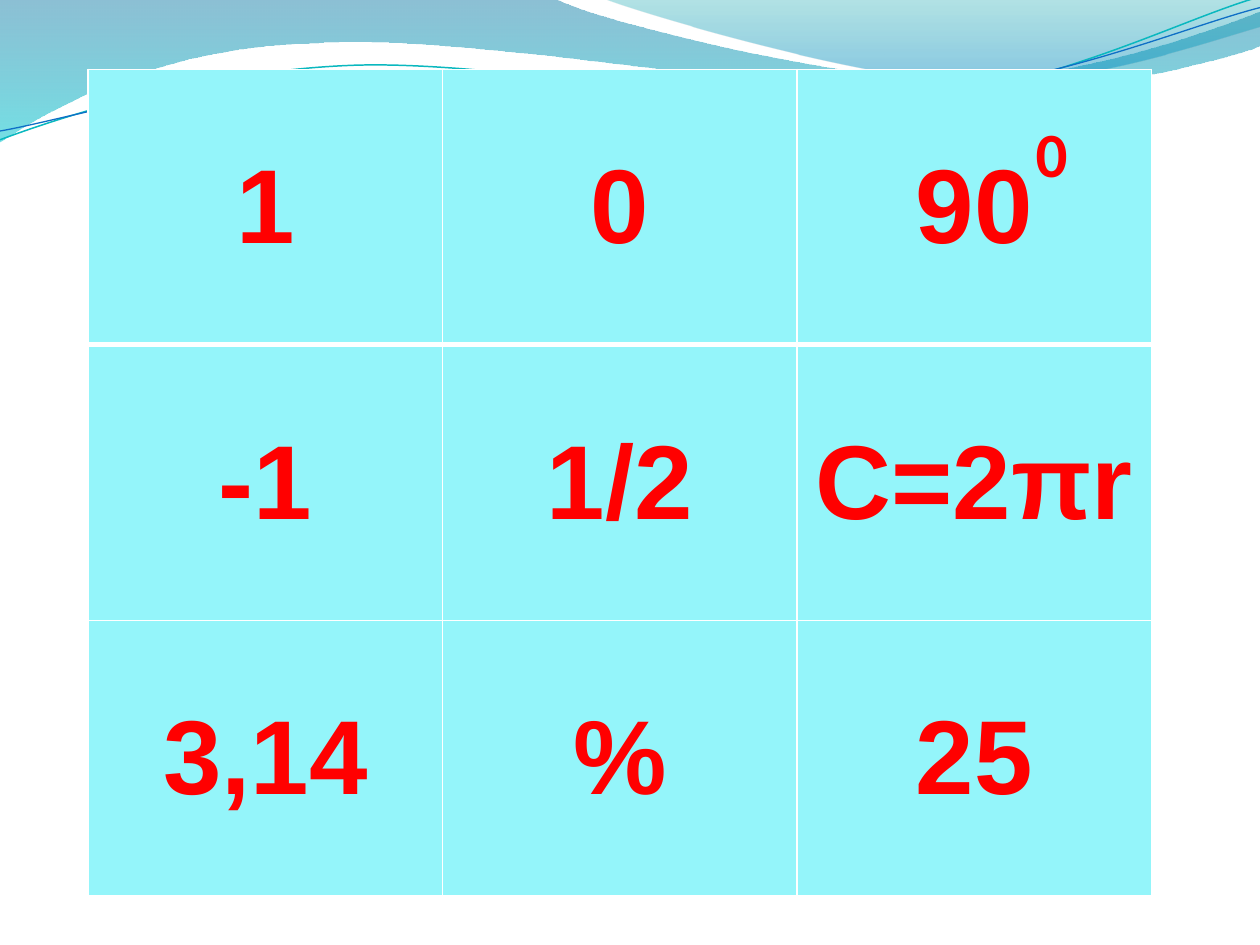
from math import cos, radians, sin

from lxml.etree import SubElement
from pptx import Presentation
from pptx.dml.color import RGBColor
from pptx.enum.text import MSO_ANCHOR, MSO_AUTO_SIZE, PP_ALIGN
from pptx.oxml.ns import qn
from pptx.util import Inches, Pt

COLORS = {
    "cell": "94F5FA", "text": "FF0000", "border": "FFFFFF",
    "wave_blue": "0074A1", "wave_cyan": "00C6CF",
    "crest_teal": "00A1A9", "crest_blue": "008BBF",
    "line_teal": "0AB8BF", "line_blue": "0F6FC6",
}
ANSWERS = [["1", "0", "90"], ["-1", "1/2", "C=2πr"], ["3,14", "%", "25"]]
LINE_ROTATION = 357.3

# Outlines in slide inches: one point is a straight step, three are a Bézier curve
LEFT_WAVE = [
    [(0, 0)], [(4.4, -0.01)],
    [(4.76, 0.17), (6.64, 0.63), (7.58, 0.63)],
    [(8.53, 0.63), (9.58, 0.26), (10, 0.09)],
    [(10.01, 0.36)],
    [(9.83, 0.44), (8.7, 0.76), (7.46, 0.75)],
    [(6.22, 0.75), (3.82, 0.28), (2.57, 0.34)],
    [(1.29, 0.36), (0.46, 0.83), (-0.01, 1.13)],
    [(0, 0)],
]
RIGHT_WAVE = [
    [(4.79, -0.01)],
    [(5.09, 0.11), (6.82, 0.62), (7.69, 0.65)],
    [(8.56, 0.69), (9.61, 0.32), (10, 0.21)],
    [(10, 0)], [(4.79, -0.01)],
]
TEAL_LINE = [
    [(0, 1.11)],
    [(0.48, 0.93), (1.58, 0.57), (2.77, 0.52)],
    [(3.95, 0.47), (5.93, 0.89), (7.13, 0.8)],
    [(8.33, 0.71), (9.38, 0.15), (9.98, -0.02)],
]
BLUE_LINE = [
    [(0, 1.04)],
    [(0.47, 0.96), (1.64, 0.61), (2.83, 0.56)],
    [(4.03, 0.51), (5.97, 0.84), (7.17, 0.75)],
    [(8.36, 0.67), (9.41, 0.21), (10, 0.06)],
]


def color(name):
    return RGBColor.from_string(COLORS[name])


def to_local(point, box, rotation):
    """Undo the shape's rotation about its centre and measure from its corner."""
    left, top, width, height = box
    angle = radians(-rotation)
    x, y = point[0] - left - width / 2, point[1] - top - height / 2
    return (x * cos(angle) - y * sin(angle) + width / 2,
            x * sin(angle) + y * cos(angle) + height / 2)


def add_outline(slide, outline, box, rotation=0, close=False):
    ends = [tuple(Inches(value) for value in step[-1]) for step in outline]
    builder = slide.shapes.build_freeform(*ends[0])
    builder.add_line_segments(ends[1:], close=close)
    shape = builder.convert_to_shape()
    shape.left, shape.top, shape.width, shape.height = map(Inches, box)
    shape.rotation = rotation
    shape.shadow.inherit = False

    # Turn the straight segments into true curves
    geometry = next(shape._element.spPr.iter(qn("a:path")))
    geometry.clear()
    geometry.set("w", str(shape.width))
    geometry.set("h", str(shape.height))
    for index, step in enumerate(outline):
        tag = "moveTo" if index == 0 else "lnTo" if len(step) == 1 else "cubicBezTo"
        segment = SubElement(geometry, qn(f"a:{tag}"))
        for point in step:
            x, y = to_local(point, box, rotation)
            SubElement(segment, qn("a:pt"), x=str(Inches(x)), y=str(Inches(y)))
    if close:
        SubElement(geometry, qn("a:close"))
    return shape


def add_wave(slide, outline, box, stops):
    shape = add_outline(slide, outline, box, close=True)
    shape.line.fill.background()
    shape.fill.gradient()
    shape.fill.gradient_angle = 270
    for stop, (position, name, _) in zip(shape.fill.gradient_stops, stops):
        stop.position = position
        stop.color.rgb = color(name)
    gradient_colors = shape._element.spPr.iter(qn("a:srgbClr"))
    for element, (_, _, opacity) in zip(gradient_colors, stops):
        SubElement(element, qn("a:alpha"), val=str(opacity * 1000))


def add_curve(slide, outline, box, name, width):
    shape = add_outline(slide, outline, box, LINE_ROTATION)
    shape.fill.background()
    shape.line.color.rgb = color(name)
    shape.line.width = Pt(width)


def add_header(slide):
    add_wave(slide, LEFT_WAVE, (-0.01, -0.01, 10.02, 1.14),
             [(0, "wave_blue", 45), (1, "wave_cyan", 55)])
    add_wave(slide, RIGHT_WAVE, (4.79, -0.01, 5.21, 0.7),
             [(0, "crest_teal", 30), (0.8, "crest_blue", 45)])
    add_curve(slide, TEAL_LINE, (-0.02, 0.22, 10.02, 0.71), "line_teal", 0.85)
    add_curve(slide, BLUE_LINE, (-0.02, 0.3, 10.03, 0.58), "line_blue", 0.75)


def format_font(paragraph, typeface, size):
    font = paragraph.runs[0].font
    font.name, font.size, font.bold = typeface, Pt(size), True
    font.color.rgb = color("text")


def set_borders(cell, widths):
    properties = cell._tc.get_or_add_tcPr()
    for side, width in widths.items():
        line = SubElement(properties, qn(f"a:ln{side}"), w=str(Pt(width)))
        fill = SubElement(line, qn("a:solidFill"))
        SubElement(fill, qn("a:srgbClr"), val=COLORS["border"])


def add_answer_table(slide, left, top, width, height):
    frame = slide.shapes.add_table(len(ANSWERS), len(ANSWERS[0]), left, top, width, height)
    for row, answers in enumerate(ANSWERS):
        for column, answer in enumerate(answers):
            cell = frame.table.cell(row, column)
            # A thick rule parts the first row from the rest
            set_borders(cell, {"L": 1, "R": 1, "T": 3 if row == 1 else 1,
                               "B": 3 if row == 0 else 1})
            cell.fill.solid()
            cell.fill.fore_color.rgb = color("cell")
            cell.vertical_anchor = MSO_ANCHOR.MIDDLE
            paragraph = cell.text_frame.paragraphs[0]
            paragraph.text = answer
            paragraph.alignment = PP_ALIGN.CENTER
            format_font(paragraph, "Arial", 60)


def add_degree_sign(slide, left, top, width, height):
    text_frame = slide.shapes.add_textbox(left, top, width, height).text_frame
    text_frame.text = "0"
    text_frame.word_wrap = True
    text_frame.auto_size = MSO_AUTO_SIZE.SHAPE_TO_FIT_TEXT
    format_font(text_frame.paragraphs[0], "Calibri", 36)


def main():
    presentation = Presentation()
    presentation.slide_width, presentation.slide_height = Inches(10), Inches(7.5)
    slide = presentation.slides.add_slide(presentation.slide_layouts[6])
    add_header(slide)
    add_answer_table(slide, Inches(0.7), Inches(0.55), Inches(8.44), Inches(6.56))
    add_degree_sign(slide, Inches(8.12), Inches(0.86), Inches(0.39), Inches(0.71))
    presentation.save("out.pptx")


if __name__ == "__main__":
    main()
